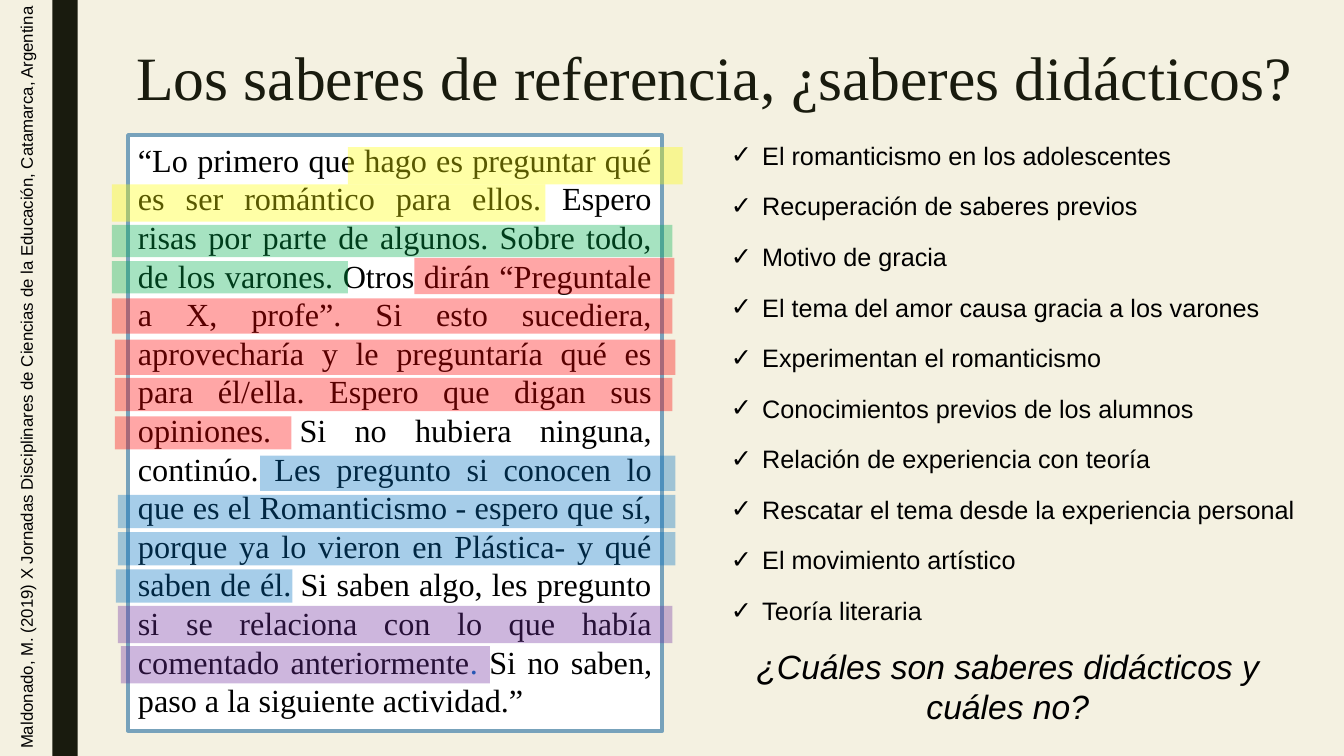
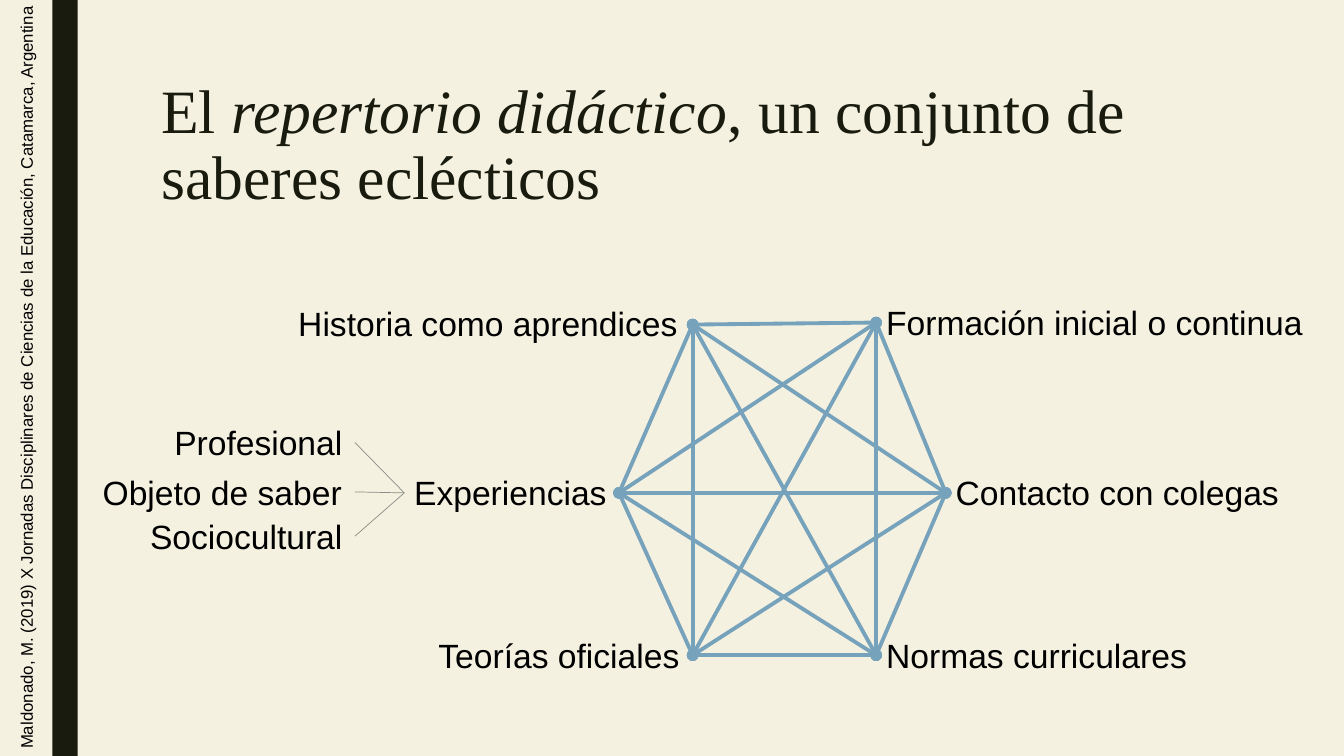
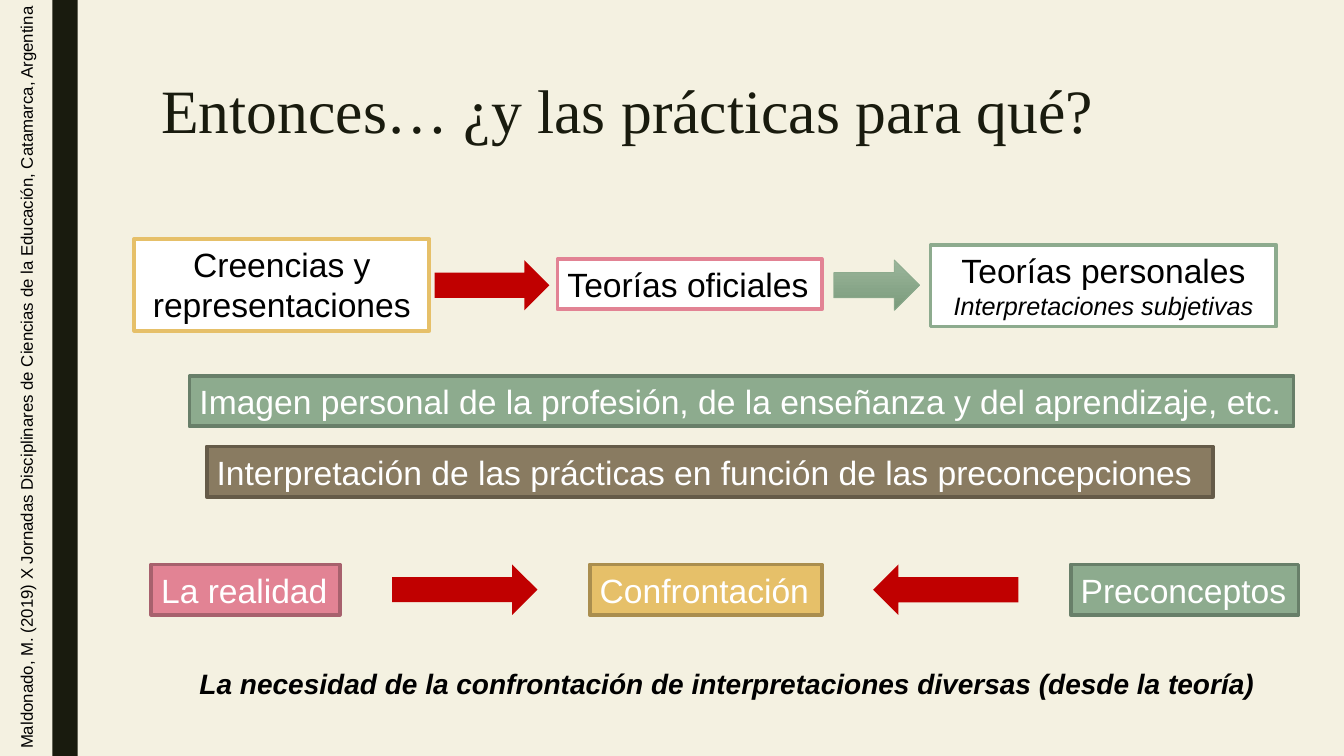
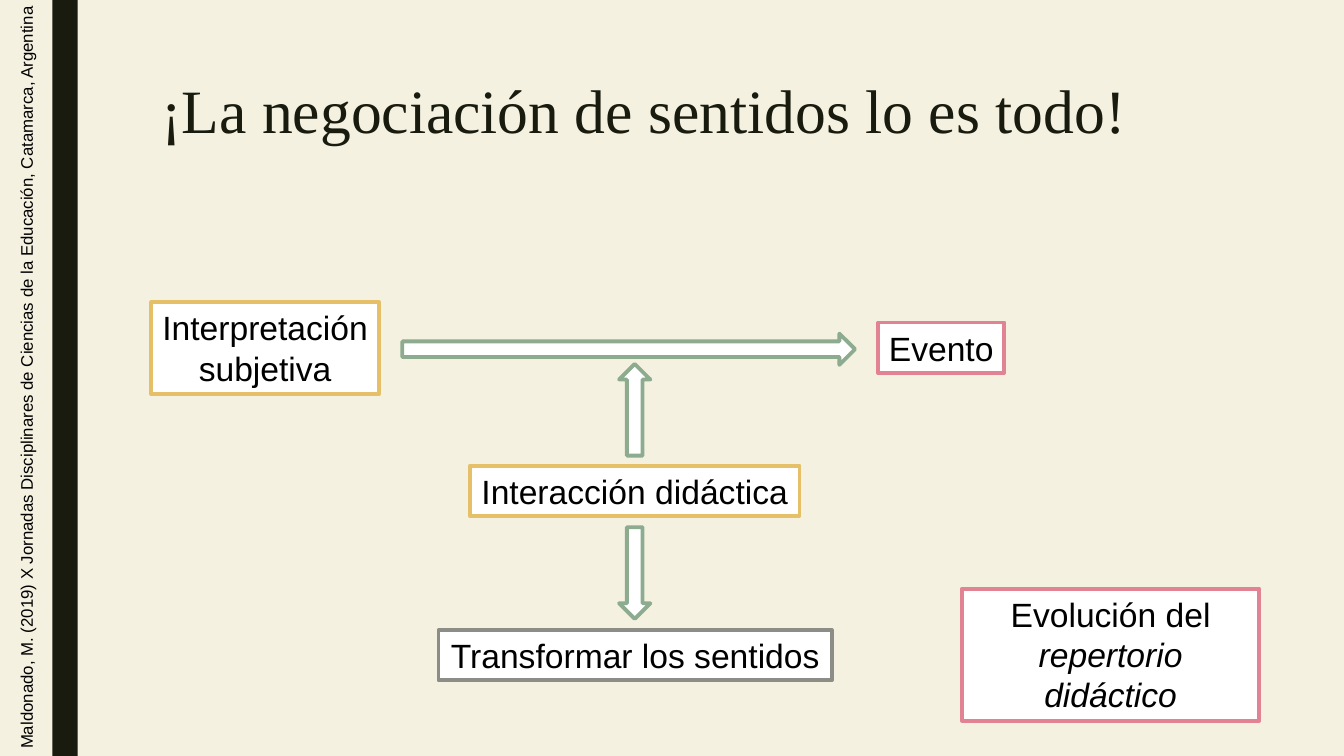
from dataclasses import dataclass, field
from itertools import combinations
from typing import Any, Optional

from pptx import Presentation
from pptx import slide as sl
from pptx import util as u
from pptx.dml.color import RGBColor
from pptx.enum import shapes as es, text as et
from pptx.oxml import ns
from pptx.oxml.xmlchemy import OxmlElement

SCALE = 9144
WIDE, HIGH = 1333, 750

CREAM = RGBColor(0xF4, 0xF1, 0xE1)
INK = RGBColor(0x19, 0x1B, 0x0E)
BLACK = RGBColor(0, 0, 0)
WHITE = RGBColor(0xFF, 0xFF, 0xFF)
BLUE = RGBColor(0x77, 0xA2, 0xBB)
LINK = RGBColor(0x00, 0x6D, 0xBF)
GRAY = RGBColor(0x8C, 0x8D, 0x86)
GOLD = RGBColor(0xE6, 0xC0, 0x69)
OCHRE = RGBColor(0xAA, 0x8E, 0x4E)
PINK = RGBColor(0xE2, 0x83, 0x94)
ROSE = RGBColor(0xA7, 0x61, 0x6D)
SAGE = RGBColor(0x8D, 0xAB, 0x8E)
MOSS = RGBColor(0x68, 0x7F, 0x69)
LIGHT = RGBColor(0x9B, 0xB5, 0x9B)
DEEP = RGBColor(0x7A, 0x9B, 0x7B)
BROWN = RGBColor(0x89, 0x7B, 0x61)
UMBER = RGBColor(0x65, 0x5B, 0x48)
RED = RGBColor(0xC0, 0, 0)
MARK_Y = RGBColor(0xFF, 0xFF, 0)
MARK_G = RGBColor(0, 0xB0, 0x50)
MARK_R = RGBColor(0xFF, 0, 0)
MARK_B = RGBColor(0, 0x70, 0xC0)
MARK_P = RGBColor(0x70, 0x30, 0xA0)

SANS, SERIF = "Arial", "Times New Roman"
LEFT, MID, FULL = et.PP_ALIGN.LEFT, et.PP_ALIGN.CENTER, et.PP_ALIGN.JUSTIFY
RECT, ARROW = es.MSO_SHAPE.RECTANGLE, es.MSO_SHAPE.RIGHT_ARROW
FRAME = {"vertical_anchor": et.MSO_ANCHOR.TOP, "auto_size": et.MSO_AUTO_SIZE.NONE}
TITLE = {"alignment": LEFT, "line_spacing": 0.89}
ITEM = {"alignment": LEFT, "line_spacing": 1.0,
        "space_before": u.Pt(0), "space_after": u.Pt(14.5)}
CREDIT = ("Maldonado, M. (2019) X Jornadas Disciplinares de Ciencias "
          "de la Educación, Catamarca, Argentina")


@dataclass
class Run:
    text: str
    size: int = 24
    color: RGBColor = BLACK
    face: str = SANS
    form: dict[str, bool] = field(default_factory=dict)


@dataclass
class Box:
    at: tuple[int, int, int, int]
    rows: list[list[Run]] = field(default_factory=list)
    fill: Optional[RGBColor] = None
    edge: Optional[RGBColor] = None
    align: Any = LEFT
    wrap: bool = False
    kind: Any = RECT
    turn: int = 0
    alpha: int = 100


def px(n: float) -> u.Emu:
    return u.Emu(round(n * SCALE))


def put(thing: Any, form: dict[str, Any]) -> None:
    for key, val in form.items():
        setattr(thing, key, val)


def place(shape: Any, at: tuple[int, int, int, int]) -> None:
    put(shape, dict(zip(("left", "top", "width", "height"), map(px, at))))


def node(top: Any, tag: str, **vals: Any) -> None:
    child = OxmlElement(tag)
    for key, val in vals.items():
        child.set(key, str(val))
    top.append(child)


def write(frame: Any, rows: list[list[Run]], form: dict[str, Any]) -> None:
    for i, row in enumerate(rows):
        para = frame.add_paragraph() if i else frame.paragraphs[0]
        put(para, form)
        for run in row:
            part = para.add_run()
            part.text = run.text
            put(part.font, {"size": u.Pt(run.size), "name": run.face, **run.form})
            part.font.color.rgb = run.color


def draw(page: sl.Slide, box: Box) -> Any:
    if box.fill is None:
        shape = page.shapes.add_textbox(*map(px, box.at))
    else:
        shape = page.shapes.add_shape(box.kind, *map(px, box.at))
        shape.shadow.inherit = False
        shape.fill.solid()
        shape.fill.fore_color.rgb = box.fill
        if box.alpha < 100:
            tint = shape.element.spPr.find(".//" + ns.qn("a:srgbClr"))
            node(tint, "a:alpha", val=box.alpha * 1000)
        if box.edge is None:
            shape.line.fill.background()
        else:
            shape.line.color.rgb = box.edge
            shape.line.width = u.Pt(2.75)
    shape.rotation = box.turn
    if box.rows:
        put(shape.text_frame, {**FRAME, "word_wrap": box.wrap})
        write(shape.text_frame, box.rows, {"alignment": box.align})
    return shape


def join(page: sl.Slide, a: tuple[int, int], b: tuple[int, int],
         color: RGBColor, width: float, end: str = "none") -> None:
    line = page.shapes.add_connector(es.MSO_CONNECTOR.STRAIGHT, *map(px, a + b))
    line.line.color.rgb = color
    line.line.width = u.Pt(width)
    props = line.element.spPr
    for tag in ("a:headEnd", "a:tailEnd"):
        node(props.find(ns.qn("a:ln")), tag, type=end)
    node(props, "a:effectLst")


def head(text: str, **form: bool) -> Run:
    return Run(text, 44, INK, SERIF, form)


def start(deck: Any, runs: list[Run], at: tuple[int, int, int, int] = (150, 75, 1050, 162),
          plan: int = 5) -> sl.Slide:
    page = deck.slides.add_slide(deck.slide_layouts[plan])
    title = page.shapes.title
    place(title, at)
    put(title.text_frame, {**FRAME, "word_wrap": True})
    write(title.text_frame, [runs], TITLE)
    return page


def sign(page: sl.Slide) -> None:
    note = draw(page, Box((-349, 360, HIGH, 30), [[Run(CREDIT, 12)]], wrap=True, turn=270))
    put(note.text_frame, {"margin_left": px(7), "margin_right": 0})


def list_out(page: sl.Slide, items: list[str]) -> None:
    body = page.placeholders[1]
    place(body, (715, 134, 600, 490))
    put(body.text_frame, {**FRAME, "word_wrap": True})
    write(body.text_frame, [[Run(item, 18)] for item in items], ITEM)
    for para in body.text_frame.paragraphs:
        props = para._p.get_or_add_pPr()
        props.set("marL", str(px(31)))
        props.set("indent", str(px(-31)))
        node(props, "a:buFont", typeface=SANS)
        node(props, "a:buChar", char="✓")


def lore(deck: Any) -> None:
    page = start(deck, [head("Los saberes de referencia, ¿saberes didácticos?")],
                 (125, 43, 1198, 162), 1)
    quote = [
        Run("“Lo primero que hago es preguntar qué es ser romántico para ellos. "
            "Espero risas por parte de algunos. Sobre todo, de los varones. Otros dirán "
            "“Preguntale a X, profe”. Si esto sucediera, aprovecharía y le preguntaría "
            "qué es para él/ella. Espero que digan sus opiniones. Si no hubiera ninguna, "
            "continúo. Les pregunto si conocen lo que es el Romanticismo - espero que sí, "
            "porque ya lo vieron en Plástica- y qué saben de él. Si saben algo, les "
            "pregunto si se relaciona con lo que había comentado anteriormente",
            23, BLACK, SERIF),
        Run(". ", 23, LINK, SERIF),
        Run("Si no saben, paso a la siguiente actividad.”", 23, BLACK, SERIF),
    ]
    draw(page, Box((127, 134, 530, 591), [quote], WHITE, BLUE, FULL, True))
    list_out(page, [
        "El romanticismo en los adolescentes",
        "Recuperación de saberes previos",
        "Motivo de gracia",
        "El tema del amor causa gracia a los varones",
        "Experimentan el romanticismo",
        "Conocimientos previos de los alumnos",
        "Relación de experiencia con teoría",
        "Rescatar el tema desde la experiencia personal",
        "El movimiento artístico",
        "Teoría literaria",
    ])
    marks = {
        MARK_Y: [(345, 146, 332, 37), (111, 183, 430, 37)],
        MARK_G: [(111, 223, 556, 32), (111, 259, 234, 32)],
        MARK_R: [(411, 256, 258, 36), (111, 296, 556, 35), (114, 337, 556, 35),
                 (114, 375, 553, 33), (114, 413, 175, 33)],
        MARK_B: [(258, 452, 412, 35), (117, 491, 553, 33), (117, 528, 553, 33),
                 (115, 565, 175, 33)],
        MARK_P: [(117, 601, 550, 37), (120, 641, 366, 37)],
    }
    for color, spots in marks.items():
        for at in spots:
            draw(page, Box(at, fill=color, alpha=35))
    ask = Run("¿Cuáles son saberes didácticos y cuáles no?", form={"italic": True})
    draw(page, Box((723, 636, 553, 91), [[ask]], align=MID, wrap=True))
    sign(page)


def web(deck: Any) -> None:
    page = start(deck, [head("El "), head("repertorio didáctico", italic=True),
                        head(", un conjunto de saberes eclécticos")])
    labels = [
        ("Historia como aprendices", 286, 296, 400),
        ("Formación inicial o continua", 869, 295, 438),
        ("Experiencias", 401, 463, 213),
        ("Contacto con colegas", 938, 463, 344),
        ("Teorías oficiales", 425, 625, 262),
        ("Normas curriculares", 869, 625, 322),
        ("Profesional", 163, 414, 189),
        ("Objeto de saber", 92, 463, 260),
        ("Sociocultural", 139, 507, 213),
    ]
    for text, x, y, w in labels:
        draw(page, Box((x, y, w, 50), [[Run(text)]]))
    nodes = [(687, 322), (869, 320), (938, 489), (869, 650), (687, 650), (614, 489)]
    for a, b in combinations(nodes, 2):
        join(page, a, b, BLUE, 2.75, "oval")
    for y in (439, 488, 532):
        join(page, (401, 489), (352, y), GRAY, 0.5)
    sign(page)


def path_to(deck: Any) -> None:
    page = start(deck, [head("Entonces… ¿y las prácticas para qué?")])
    own = [[Run("Teorías personales")],
           [Run("Interpretaciones subjetivas", 18, form={"italic": True})]]
    draw(page, Box((133, 237, 293, 91), [[Run("Creencias y representaciones")]],
                   WHITE, GOLD, MID, True))
    draw(page, Box((553, 257, 262, 50), [[Run("Teorías oficiales")]], WHITE, PINK))
    draw(page, Box((923, 243, 343, 81), own, WHITE, SAGE, MID, True))
    bars = [
        ("Imagen personal de la profesión, de la enseñanza y del aprendizaje, etc.",
         188, 373, 1095, SAGE, MOSS),
        ("Interpretación de las prácticas en función de las preconcepciones ",
         205, 443, 998, BROWN, UMBER),
        ("La realidad", 150, 560, 187, PINK, ROSE),
        ("Confrontación", 585, 560, 230, GOLD, OCHRE),
        ("Preconceptos", 1062, 560, 226, SAGE, MOSS),
    ]
    for text, x, y, w, fill, edge in bars:
        draw(page, Box((x, y, w, 50), [[Run(text, color=WHITE)]], fill, edge))
    for x, y, w, turn in [(389, 560, 144, 0), (866, 560, 144, 180), (431, 258, 114, 0)]:
        draw(page, Box((x, y, w, 50), fill=RED, kind=ARROW, turn=turn))
    fade = draw(page, Box((827, 258, 85, 50), fill=SAGE, edge=SAGE, kind=ARROW))
    fade.line.width = u.Pt(0.5)
    fade.fill.gradient()
    fade.fill.gradient_angle = 270
    for stop, color in zip(fade.fill.gradient_stops, (LIGHT, DEEP)):
        stop.color.rgb = color
    need = Run("La necesidad de la confrontación de interpretaciones diversas "
               "(desde la teoría)", 20, form={"bold": True, "italic": True})
    draw(page, Box((188, 656, 1082, 44), [[need]]))
    sign(page)


def sense(deck: Any) -> None:
    page = start(deck, [head("¡La negociación de sentidos lo es todo!")], (150, 75, 1164, 162))
    cards = [
        (["Evento"], (871, 320, 125, 50), PINK),
        (["Interpretación", "subjetiva"], (150, 300, 226, 91), GOLD),
        (["Interacción didáctica"], (466, 462, 327, 50), GOLD),
        (["Transformar los sentidos"], (435, 625, 390, 50), GRAY),
    ]
    for rows, at, edge in cards:
        draw(page, Box(at, [[Run(row)] for row in rows], WHITE, edge, MID))
    for at, turn in [((399, 331, 449, 31), 0), ((584, 391, 91, 31), 270),
                     ((584, 553, 91, 31), 90)]:
        draw(page, Box(at, fill=WHITE, edge=SAGE, kind=ARROW, turn=turn))
    goal = [Run("Evolución del "), Run("repertorio didáctico", form={"italic": True})]
    draw(page, Box((954, 584, 295, 131), [goal], WHITE, PINK, MID, True))
    sign(page)


def main() -> None:
    deck = Presentation()
    put(deck, {"slide_width": px(WIDE), "slide_height": px(HIGH)})
    base = deck.slide_master
    base.background.fill.solid()
    base.background.fill.fore_color.rgb = CREAM
    for build in (lore, web, path_to, sense):
        build(deck)
    band = draw(deck.slides[0], Box((52, 0, 25, HIGH), fill=INK))
    base.shapes.element.insert(2, band.element)
    deck.save("out.pptx")


if __name__ == "__main__":
    main()
